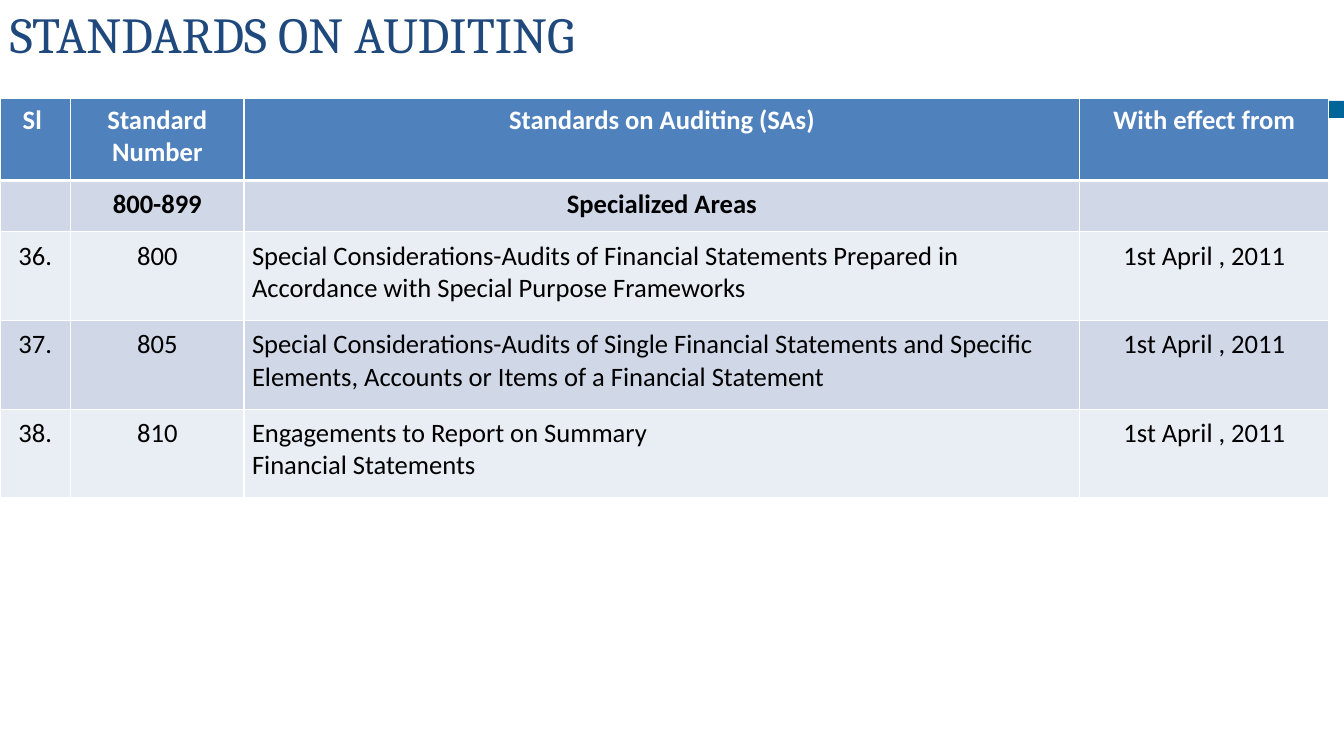
from lxml import etree
from pptx import Presentation
from pptx.dml.color import RGBColor
from pptx.enum.shapes import MSO_SHAPE
from pptx.enum.text import MSO_ANCHOR, PP_ALIGN
from pptx.oxml.ns import qn
from pptx.util import Inches, Pt

RECTANGLE = MSO_SHAPE.RECTANGLE
MIDDLE = MSO_ANCHOR.MIDDLE
LEFT, CENTER = PP_ALIGN.LEFT, PP_ALIGN.CENTER

COLORS = {
    "title": "1F497D",
    "accent": "006699",
    "header": "4F81BD",
    "dark_band": "D0D8E8",
    "light_band": "E9EDF4",
    "white": "FFFFFF",
    "text": "000000",
}
COLUMN_WIDTHS = [0.7, 1.72, 8.29, 2.47]
ROW_HEIGHTS = [0.81, 0.51, 0.88, 0.88, 0.88]
NAME_COLUMN = 2
EFFECTIVE_DATE = "1st April , 2011"
STANDARDS = [
    ["Sl ", "Standard Number", "Standards on Auditing (SAs)", "With effect from"],
    ["", "800-899", "Specialized Areas", ""],
    ["36.", "800", "Special Considerations-Audits of Financial Statements Prepared in "
     "Accordance with Special Purpose Frameworks", EFFECTIVE_DATE],
    ["37.", "805", "Special Considerations-Audits of Single Financial Statements and Specific "
     "Elements, Accounts or Items of a Financial Statement", EFFECTIVE_DATE],
    ["38.", "810", "Engagements to Report on Summary\nFinancial Statements", EFFECTIVE_DATE],
]


def rgb(name):
    """Return the named palette colour."""
    return RGBColor.from_string(COLORS[name])


def style_font(font, face, size, color, bold=False):
    """Set face, size, colour and weight of a font."""
    font.name, font.size, font.bold = face, Pt(size), bold
    font.color.rgb = rgb(color)


def add_accent_bar(slide, left, top, width, height):
    """Draw the accent bar that runs behind the table."""
    bar = slide.shapes.add_shape(
        RECTANGLE, Inches(left), Inches(top), Inches(width), Inches(height))
    bar.shadow.inherit = False
    bar.fill.solid()
    bar.fill.fore_color.rgb = rgb("accent")
    bar.line.fill.background()


def add_title(slide, left, top, width, height):
    """Write the slide title in the given box."""
    title = slide.shapes.add_textbox(
        Inches(left), Inches(top), Inches(width), Inches(height))
    frame = title.text_frame
    frame.word_wrap = True
    frame.vertical_anchor = MIDDLE
    heading = frame.paragraphs[0]
    heading.text = "STANDARDS ON AUDITING"
    style_font(heading.font, "Cambria", 36, "title")


def set_borders(cell, top, bottom):
    """Give a cell white borders, with top and bottom widths in points."""
    properties = cell._tc.get_or_add_tcPr()
    for side, width in (("lnL", 1), ("lnR", 1), ("lnT", top), ("lnB", bottom)):
        line = etree.SubElement(properties, qn(f"a:{side}"), w=str(Pt(width)))
        fill = etree.SubElement(line, qn("a:solidFill"))
        etree.SubElement(fill, qn("a:srgbClr"), val=COLORS["white"])


def fill_cell(cell, text, row, column):
    """Write and style one cell according to its row and column."""
    is_header = row == 0
    set_borders(cell, 3 if row == 1 else 1, 3 if is_header else 1)
    band = "header" if is_header else "dark_band" if row % 2 else "light_band"
    cell.fill.solid()
    cell.fill.fore_color.rgb = rgb(band)
    if not is_header:
        cell.margin_left = cell.margin_right = Inches(0.08)
        cell.margin_top = cell.margin_bottom = Inches(0.08)
    entry = cell.text_frame.paragraphs[0]
    entry.text = text
    entry.alignment = LEFT if row > 1 and column == NAME_COLUMN else CENTER
    style_font(entry.font, "Calibri", 19, "white" if is_header else "text", row < 2)


def add_standards_table(slide, left, top):
    """Build the table of standards from its top left corner."""
    table = slide.shapes.add_table(
        len(ROW_HEIGHTS), len(COLUMN_WIDTHS), Inches(left), Inches(top),
        Inches(sum(COLUMN_WIDTHS)), Inches(sum(ROW_HEIGHTS))).table
    for column, width in zip(table.columns, COLUMN_WIDTHS):
        column.width = Inches(width)
    for row, height in zip(table.rows, ROW_HEIGHTS):
        row.height = Inches(height)
    for row, standard in enumerate(STANDARDS):
        for column, text in enumerate(standard):
            fill_cell(table.cell(row, column), text, row, column)


def main():
    """Build and save the slide."""
    presentation = Presentation()
    presentation.slide_width = Inches(13.33)
    presentation.slide_height = Inches(7.5)
    slide = presentation.slides.add_slide(presentation.slide_layouts[6])
    add_accent_bar(slide, 0.86, 1, 12.47, 0.17)
    add_title(slide, 0, 0, 12.78, 0.67)
    add_standards_table(slide, 0, 0.98)
    presentation.save("out.pptx")


if __name__ == "__main__":
    main()
